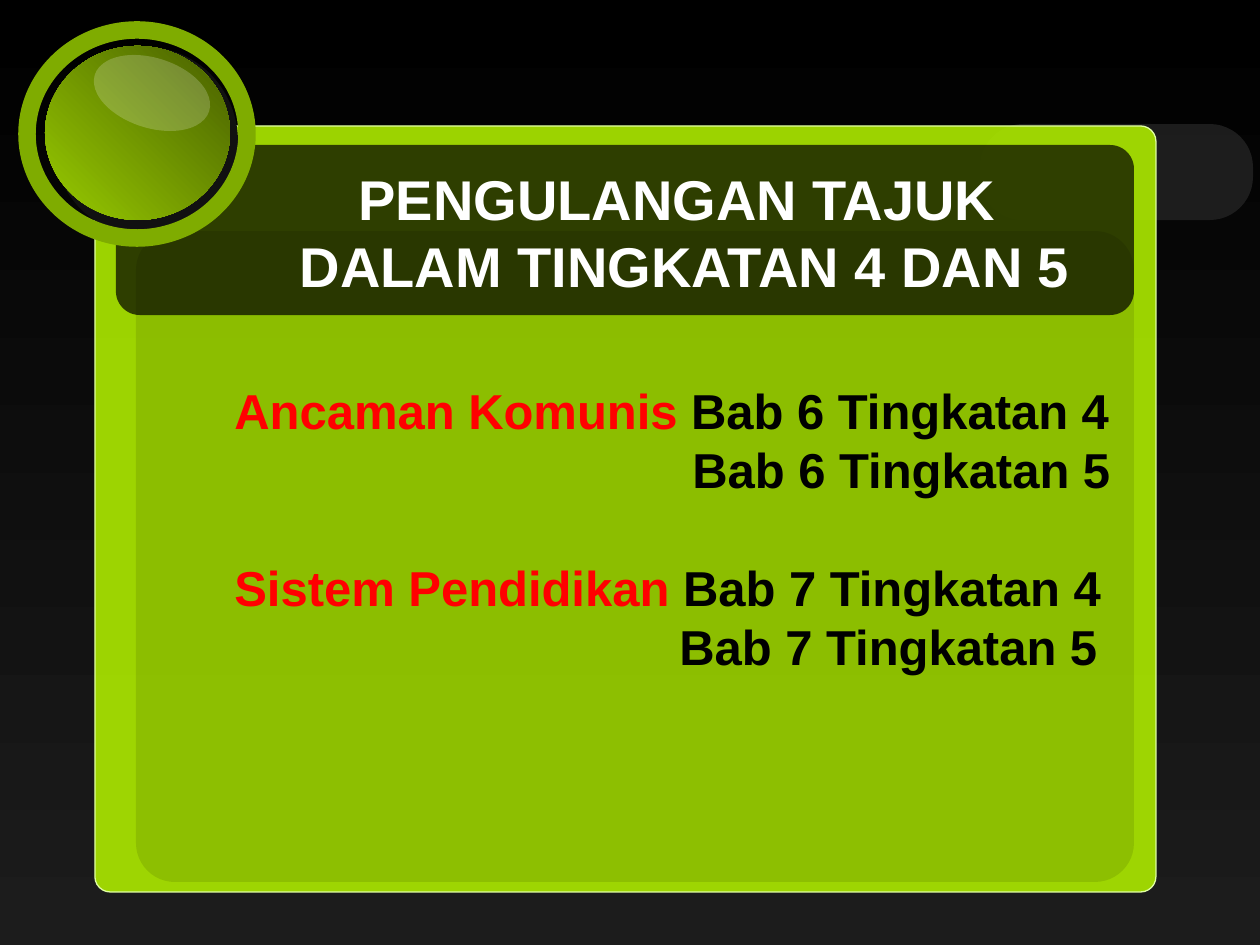
from dataclasses import dataclass
from typing import Optional

from pptx import Presentation
from pptx.dml.color import RGBColor
from pptx.enum.shapes import MSO_SHAPE
from pptx.enum.text import MSO_ANCHOR, PP_ALIGN
from pptx.oxml.ns import qn
from pptx.util import Emu, Pt
from lxml.etree import SubElement

EMU_PER_PX = 914400 / 126
LINE_FACTOR = 1.2
FONT = "Arial"

BLACK = RGBColor(0x00, 0x00, 0x00)
WHITE = RGBColor(0xFF, 0xFF, 0xFF)
RED = RGBColor(0xFF, 0x00, 0x00)
CHARCOAL = RGBColor(0x1C, 0x1C, 0x1C)
TAB_GREY = RGBColor(0x28, 0x28, 0x28)
LENS_BACK = RGBColor(0x11, 0x11, 0x11)
LIME = RGBColor(0xAD, 0xEA, 0x00)
PALE_LIME = RGBColor(0xE0, 0xFF, 0xA3)
RING_GREEN = RGBColor(0x7F, 0xAC, 0x00)
LENS_LIGHT = RGBColor(0x99, 0xCC, 0x00)
LENS_DARK = RGBColor(0x47, 0x5E, 0x00)


@dataclass(frozen=True)
class Panel:
    left: int
    top: int
    width: int
    height: int
    fill: Optional[RGBColor] = None
    opacity: int = 100
    corner: Optional[float] = None
    line: Optional[RGBColor] = None
    line_width: float = 0
    rotation: float = 0
    gradient: Optional[tuple[RGBColor, RGBColor]] = None


@dataclass(frozen=True)
class Span:
    text: str
    color: RGBColor


CORNER_TAB = Panel(980, 124, 273, 96, TAB_GREY, 70, 0.45)
CARD = Panel(95, 126, 1061, 766, LIME, 90, 0.02, PALE_LIME, 0.75)
HEADER = Panel(116, 145, 1018, 170, BLACK, 70, 0.14)
BODY = Panel(136, 231, 998, 651, BLACK, 10, 0.06)
LENS = [
    Panel(53, 47, 185, 189, LENS_BACK),
    Panel(27, 30, 220, 208, line=RING_GREEN, line_width=10),
    Panel(45, 46, 185, 174, gradient=(LENS_LIGHT, LENS_DARK)),
    Panel(92, 58, 120, 70, WHITE, 20, rotation=17.7),
]


def px(length: int) -> Emu:
    return Emu(round(length * EMU_PER_PX))


def paint_gradient(fill, colors: tuple[RGBColor, RGBColor], angle: int) -> None:
    fill.gradient()
    fill.gradient_angle = angle
    for stop, color in zip(fill.gradient_stops, colors):
        stop.color.rgb = color


def draw_panel(shapes, panel: Panel):
    kind = MSO_SHAPE.OVAL if panel.corner is None else MSO_SHAPE.ROUNDED_RECTANGLE
    shape = shapes.add_shape(
        kind, px(panel.left), px(panel.top), px(panel.width), px(panel.height)
    )
    shape.shadow.inherit = False
    shape.rotation = panel.rotation
    if panel.corner is not None:
        shape.adjustments[0] = panel.corner
    if panel.gradient:
        paint_gradient(shape.fill, panel.gradient, 45)
    elif panel.fill is None:
        shape.fill.background()
    else:
        shape.fill.solid()
        shape.fill.fore_color.rgb = panel.fill
        if panel.opacity < 100:
            color = next(shape.fill._xPr.iter(qn("a:srgbClr")))
            SubElement(color, qn("a:alpha"), val=str(panel.opacity * 1000))
    if panel.line is None:
        shape.line.fill.background()
    else:
        shape.line.color.rgb = panel.line
        shape.line.width = Pt(panel.line_width)
    return shape


def write_line(
    para,
    spans: list[Span],
    *,
    size: int,
    align: PP_ALIGN = PP_ALIGN.LEFT,
    indent: int = 0,
    lines_before: int = 0,
) -> None:
    pitch = Pt(size * LINE_FACTOR)
    para.alignment = align
    para.line_spacing = pitch
    para.space_before = pitch * lines_before
    para._p.get_or_add_pPr().set("marL", str(px(indent)))
    for span in spans:
        run = para.add_run()
        run.text = span.text
        run.font.name = FONT
        run.font.size = Pt(size)
        run.font.bold = True
        run.font.color.rgb = span.color


def next_paragraph(frame, index: int):
    return frame.paragraphs[0] if index == 0 else frame.add_paragraph()


def write_title(page) -> None:
    box = page.shapes.add_textbox(px(284), px(158), px(802), px(149))
    frame = box.text_frame
    frame.word_wrap = False
    for index, text in enumerate(["PENGULANGAN TAJUK ", "DALAM TINGKATAN 4 DAN 5"]):
        write_line(
            next_paragraph(frame, index),
            [Span(text, WHITE)],
            size=32,
            align=PP_ALIGN.CENTER,
        )


def write_topics(shape) -> None:
    frame = shape.text_frame
    frame.word_wrap = True
    frame.vertical_anchor = MSO_ANCHOR.MIDDLE
    frame.margin_left = px(87)
    frame.margin_right = px(0)
    frame.margin_top = px(6)
    frame.margin_bottom = px(63)
    topics = [("Ancaman Komunis", 6, 458), ("Sistem Pendidikan", 7, 445)]
    for index, (topic, chapter, indent) in enumerate(topics):
        write_line(
            next_paragraph(frame, index),
            [Span(topic, RED), Span(f" Bab {chapter} Tingkatan 4", BLACK)],
            size=28,
            lines_before=index,
        )
        write_line(
            frame.add_paragraph(),
            [Span(f"Bab {chapter} Tingkatan 5", BLACK)],
            size=28,
            indent=indent,
        )


def main() -> None:
    deck = Presentation()
    deck.slide_width = px(1260)
    deck.slide_height = px(945)
    page = deck.slides.add_slide(deck.slide_layouts[6])
    paint_gradient(page.background.fill, (BLACK, CHARCOAL), 270)
    for panel in (CORNER_TAB, CARD, HEADER):
        draw_panel(page.shapes, panel)
    write_topics(draw_panel(page.shapes, BODY))
    write_title(page)
    lens = page.shapes.add_group_shape()
    for panel in LENS:
        draw_panel(lens.shapes, panel)
    deck.save("out.pptx")


if __name__ == "__main__":
    main()
